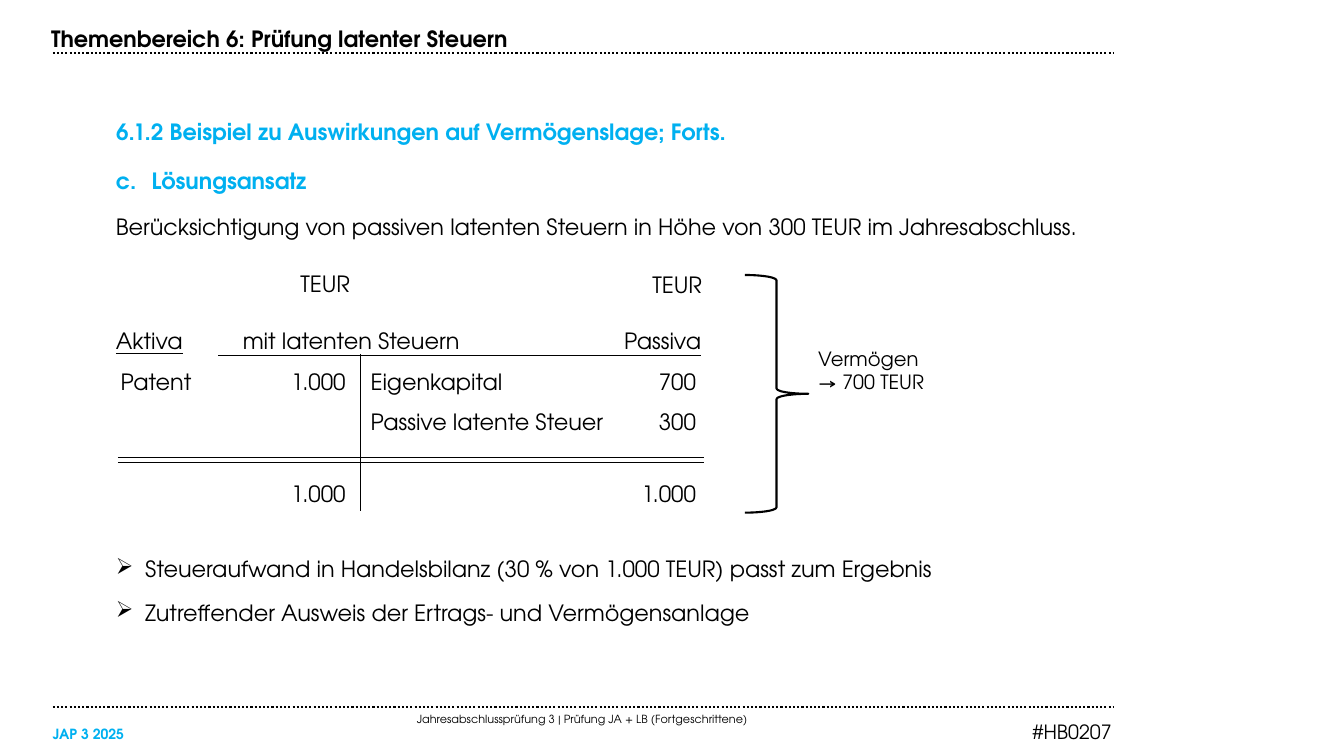
from dataclasses import dataclass

from lxml import etree
from pptx import Presentation
from pptx.dml.color import RGBColor
from pptx.enum.dml import MSO_LINE
from pptx.enum.shapes import MSO_CONNECTOR, MSO_SHAPE
from pptx.enum.text import MSO_ANCHOR, PP_ALIGN
from pptx.oxml.ns import qn
from pptx.util import Cm, Pt

LEFT, CENTER, RIGHT = PP_ALIGN.LEFT, PP_ALIGN.CENTER, PP_ALIGN.RIGHT
TOP, MIDDLE = MSO_ANCHOR.TOP, MSO_ANCHOR.MIDDLE
STRAIGHT, BRACE, DOTTED = MSO_CONNECTOR.STRAIGHT, MSO_SHAPE.RIGHT_BRACE, MSO_LINE.ROUND_DOT


@dataclass(frozen=True)
class Theme:
    font: str = "TeX Gyre Adventor"
    ink: RGBColor = RGBColor(0, 0, 0)
    accent: RGBColor = RGBColor(0x00, 0xB0, 0xF0)
    body: int = 16
    note: int = 14
    label: int = 10
    footer: int = 8
    inset: float = 0.25
    row_height: float = 0.94


class SlideBuilder:
    def __init__(self, slide, theme):
        self.slide = slide
        self.theme = theme

    def text(self, left, top, width, height, lines, size=None, color=None, bold=False,
             align=LEFT, anchor=TOP, inset=None):
        """Add a text box and return its paragraphs."""
        theme = self.theme
        box = self.slide.shapes.add_textbox(Cm(left), Cm(top), Cm(width), Cm(height))
        frame = box.text_frame
        frame.word_wrap = True
        frame.vertical_anchor = anchor
        margin = theme.inset if inset is None else inset
        frame.margin_left = frame.margin_right = Cm(margin)
        frame.margin_top = frame.margin_bottom = Cm(margin / 2)
        frame.text = "\n".join(lines)
        for paragraph in frame.paragraphs:
            paragraph.alignment = align
            for run in paragraph.runs:
                run.font.name = theme.font
                run.font.size = Pt(size or theme.body)
                run.font.bold = bold
                run.font.color.rgb = color or theme.ink
        return frame.paragraphs

    def bullet(self, paragraph, indent, tag, **attributes):
        properties = paragraph._p.get_or_add_pPr()
        properties.set("marL", str(Cm(indent)))
        properties.set("indent", str(-Cm(indent)))
        etree.SubElement(properties, qn(tag), attributes)

    def tabbed(self, left, top, width, content, stops):
        """Add one line of text whose columns sit on (position, alignment) tab stops."""
        paragraph = self.text(left, top, width, self.theme.row_height, [content])[0]
        tab_list = etree.SubElement(paragraph._p.get_or_add_pPr(), qn("a:tabLst"))
        for position, side in stops:
            etree.SubElement(tab_list, qn("a:tab"), {"pos": str(Cm(position)), "algn": side})
        return paragraph

    def line(self, start_x, start_y, end_x, end_y, width=1, dash=None):
        connector = self.slide.shapes.add_connector(
            STRAIGHT, Cm(start_x), Cm(start_y), Cm(end_x), Cm(end_y))
        connector.line.color.rgb = self.theme.ink
        connector.line.width = Pt(width)
        if dash:
            connector.line.dash_style = dash
        etree.SubElement(connector._element.spPr, qn("a:effectLst"))

    def brace(self, left, top, width, height):
        shape = self.slide.shapes.add_shape(BRACE, Cm(left), Cm(top), Cm(width), Cm(height))
        shape.shadow.inherit = False
        shape.fill.background()
        shape.line.color.rgb = self.theme.ink
        shape.line.width = Pt(1.5)


def main():
    presentation = Presentation()
    presentation.slide_width, presentation.slide_height = Cm(33.87), Cm(19.05)
    slide = presentation.slides.add_slide(presentation.slide_layouts[6])
    theme = Theme()
    builder = SlideBuilder(slide, theme)

    # Header and footer
    for rule_y in (1.33, 17.81):
        builder.line(1.33, rule_y, 28.05, rule_y, 1.5, DOTTED)
    builder.text(1.04, 0.51, 27.8, 0.94, ["Themenbereich 6: Prüfung latenter Steuern"], bold=True)
    builder.text(1.33, 17.96, 26.7, 0.33,
                 ["Jahresabschlussprüfung 3 | Prüfung JA + LB (Fortgeschrittene)"],
                 theme.footer, align=CENTER, anchor=MIDDLE, inset=0)
    builder.text(24.2, 18.14, 3.82, 0.76, ["#HB0207"], theme.note, align=RIGHT, inset=0)
    builder.text(1.33, 18.14, 2.67, 0.69, ["JAP 3 2025"], theme.label, theme.accent, True,
                 anchor=MIDDLE, inset=0)

    # Headings and introduction
    builder.text(2.93, 2.87, 30, 0.89,
                 ["6.1.2 Beispiel zu Auswirkungen auf Vermögenslage; Forts."],
                 color=theme.accent, bold=True, anchor=MIDDLE, inset=0)
    heading, introduction = builder.text(2.67, 4.01, 30, 2.34, [
        "Lösungsansatz",
        "Berücksichtigung von passiven latenten Steuern in Höhe von 300 TEUR im Jahresabschluss."])
    builder.bullet(heading, 0.9, "a:buAutoNum", type="alphaLcPeriod", startAt="3")
    heading.runs[0].font.bold = True
    heading.runs[0].font.color.rgb = theme.accent
    heading.line_spacing = introduction.line_spacing = 1.1
    introduction.space_before = Pt(12)

    # Account header
    for unit_left, unit_top in ((7.32, 6.68), (16.19, 6.71)):
        builder.text(unit_left, unit_top, 2.4, theme.row_height, ["TEUR"])
    header = builder.tabbed(2.67, 8.13, 16.3, "Aktiva\tmit latenten Steuern\tPassiva",
                            [(3.2, "l"), (14.75, "r")])
    rest = header.add_run()
    first = header.runs[0]
    first.text, rest.text = "Aktiva", first.text[len("Aktiva"):]
    rest.font.name, rest.font.size = theme.font, Pt(theme.body)
    rest.font.color.rgb = theme.ink
    first.font.underline = True
    builder.line(5.5, 8.96, 17.67, 8.96, 0.75)

    # Account rows: assets left, liabilities right
    for row_top, asset, liability in (
            (9.16, "Patent\t1.000", "Eigenkapital\t700"),
            (10.17, None, "Passive latente Steuer\t300"),
            (11.98, "\t1.000", "\t1.000")):
        if asset:
            builder.tabbed(2.79, row_top, 6.2, asset, [(5.67, "r")])
        builder.tabbed(9.09, row_top, 9.12, liability, [(8.2, "r")])
    for total_y in (11.53, 11.66):
        builder.line(2.97, total_y, 17.58 + 0.15, total_y)
    builder.line(9.09, 8.92, 9.09, 12.88)

    # Result of the account
    builder.brace(18.77, 6.93, 1.6, 5.99)
    builder.text(20.37, 8.61, 3.2, 1.45, ["Vermögen", "→ 700 TEUR"], theme.note)

    # Conclusions
    conclusions = builder.text(2.67, 13.87, 30, 2.06, [
        "Steueraufwand in Handelsbilanz (30 % von 1.000 TEUR) passt zum Ergebnis",
        "Zutreffender Ausweis der Ertrags- und Vermögensanlage"])
    for conclusion in conclusions:
        builder.bullet(conclusion, 0.74, "a:buChar", char="➢")
    conclusions[1].space_before = Pt(12)

    presentation.save("out.pptx")


if __name__ == "__main__":
    main()
